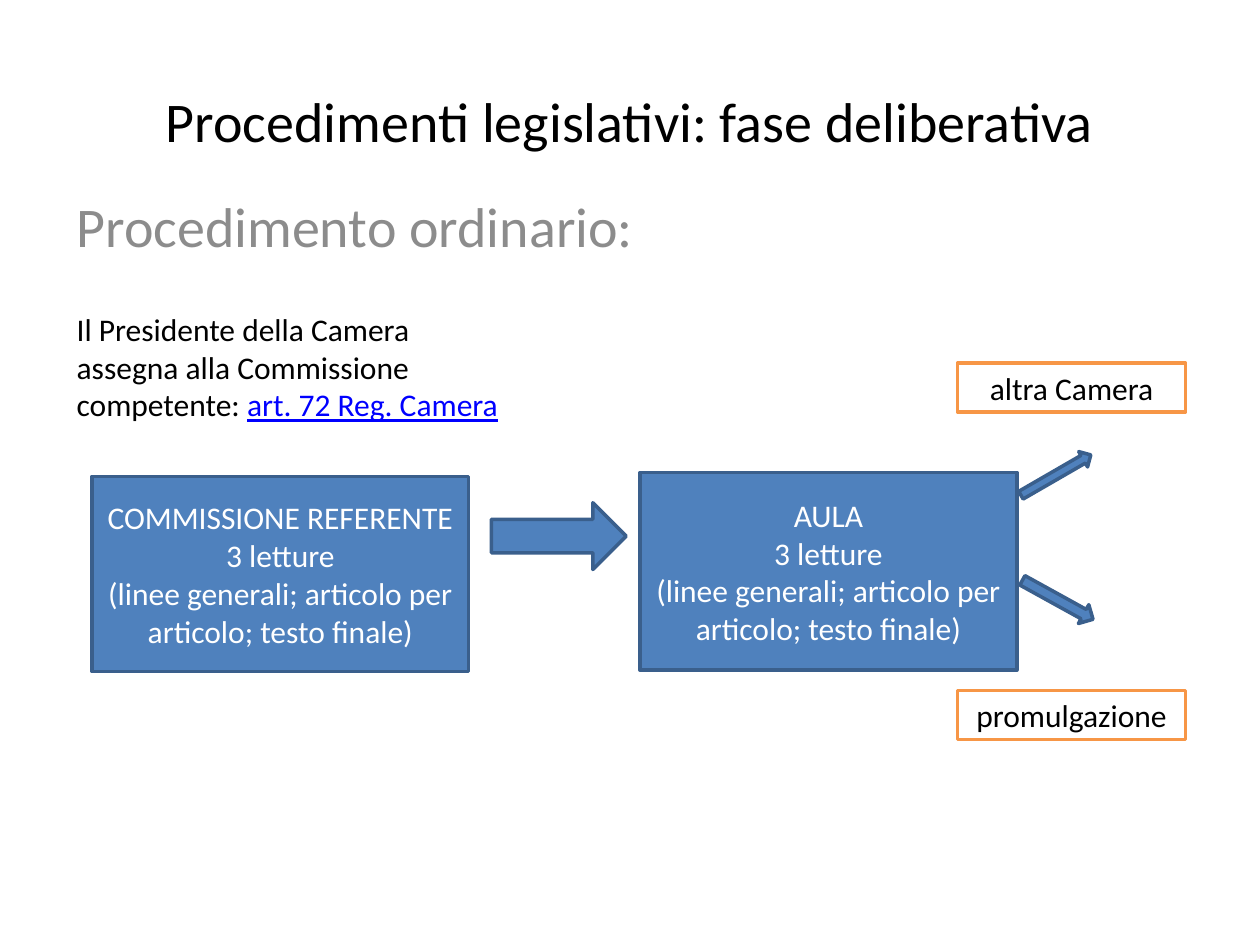
from dataclasses import dataclass

from pptx import Presentation
from pptx.dml.color import RGBColor
from pptx.enum.shapes import MSO_SHAPE
from pptx.enum.text import MSO_ANCHOR, PP_ALIGN
from pptx.util import Inches, Pt

RECT, RIGHT_ARROW, DOWN_ARROW = (
    MSO_SHAPE.RECTANGLE, MSO_SHAPE.RIGHT_ARROW, MSO_SHAPE.DOWN_ARROW)
LEFT, CENTER = PP_ALIGN.LEFT, PP_ALIGN.CENTER
TOP, MIDDLE = MSO_ANCHOR.TOP, MSO_ANCHOR.MIDDLE


@dataclass(frozen=True)
class Theme:
    font: str = "Calibri"
    heading: int = 32
    body: int = 18
    line: int = 2
    black: str = "000000"
    white: str = "FFFFFF"
    grey: str = "8C8C8C"
    blue: str = "4F81BD"
    dark_blue: str = "3A5F8C"
    orange: str = "F79646"
    link: str = "0000FF"


THEME = Theme()


def rgb(value):
    return RGBColor.from_string(value)


def add_run(p, text, size, color, underline=None):
    r = p.add_run()
    r.text = text
    f = r.font
    f.name, f.size, f.underline = THEME.font, Pt(size), underline
    f.color.rgb = rgb(color)


def write(tf, lines, size, color, align=CENTER, anchor=MIDDLE):
    tf.word_wrap = True
    tf.vertical_anchor = anchor
    for i, line in enumerate(lines):
        p = tf.add_paragraph() if i else tf.paragraphs[0]
        p.alignment = align
        add_run(p, line, size, color)


def add_textbox(s, box):
    return s.shapes.add_textbox(*map(Inches, box)).text_frame


def add_block(s, kind, box, fill=THEME.blue, line=THEME.dark_blue, rotation=0):
    sp = s.shapes.add_shape(kind, *map(Inches, box))
    sp.shadow.inherit = False
    sp.fill.solid()
    sp.fill.fore_color.rgb = rgb(fill)
    sp.line.color.rgb = rgb(line)
    sp.line.width = Pt(THEME.line)
    sp.rotation = rotation
    return sp


def add_title(s, box, text):
    sp = s.shapes.title
    sp.left, sp.top, sp.width, sp.height = map(Inches, box)
    write(sp.text_frame, [text], THEME.heading, THEME.black)


def add_subtitle(s, box, text):
    tf = add_textbox(s, box)
    write(tf, [text], THEME.heading, THEME.grey, LEFT, TOP)
    tf.paragraphs[0].space_before = Pt(THEME.heading * 0.2)


def add_assignment(s, box, text, reference):
    """Opening step, ending in the underlined rule it rests on."""
    tf = add_textbox(s, box)
    write(tf, [text], THEME.body, THEME.black, LEFT, TOP)
    add_run(tf.paragraphs[0], reference, THEME.body, THEME.link, True)


def add_stage(s, box, lines):
    sp = add_block(s, RECT, box)
    write(sp.text_frame, lines, THEME.body, THEME.white)


def add_outcome(s, box, text):
    sp = add_block(s, RECT, box, THEME.white, THEME.orange)
    write(sp.text_frame, [text], THEME.body, THEME.black)


def main():
    prs = Presentation()
    prs.slide_width, prs.slide_height = Inches(10), Inches(7.5)
    s = prs.slides.add_slide(prs.slide_layouts[5])

    add_title(s, (0.75, 0.6, 8.5, 0.71),
              "Procedimenti legislativi: fase deliberativa")
    add_subtitle(s, (0.51, 1.47, 8.74, 0.75), "Procedimento ordinario:")

    readings = "(linee generali; articolo per articolo; testo finale)"
    add_stage(s, (0.73, 3.78, 2.99, 1.55),
              ["COMMISSIONE REFERENTE 3 letture", readings])
    add_block(s, RIGHT_ARROW, (3.9, 3.99, 1.07, 0.53))
    add_stage(s, (5.08, 3.75, 2.99, 1.57), ["AULA", "3 letture", readings])

    outcomes = [
        ("altra Camera", 2.88, (8.31, 3.45, 0.14, 0.64), 240),
        ("promulgazione", 5.48, (8.31, 4.44, 0.17, 0.64), 298.9),
    ]
    for text, top, arrow_box, rotation in outcomes:
        add_block(s, DOWN_ARROW, arrow_box, rotation=rotation)
        add_outcome(s, (7.6, top, 1.81, 0.39), text)

    add_assignment(
        s, (0.51, 2.41, 3.62, 1.01),
        "Il Presidente della Camera assegna alla Commissione competente: ",
        "art. 72 Reg. Camera")
    prs.save("out.pptx")


if __name__ == "__main__":
    main()
